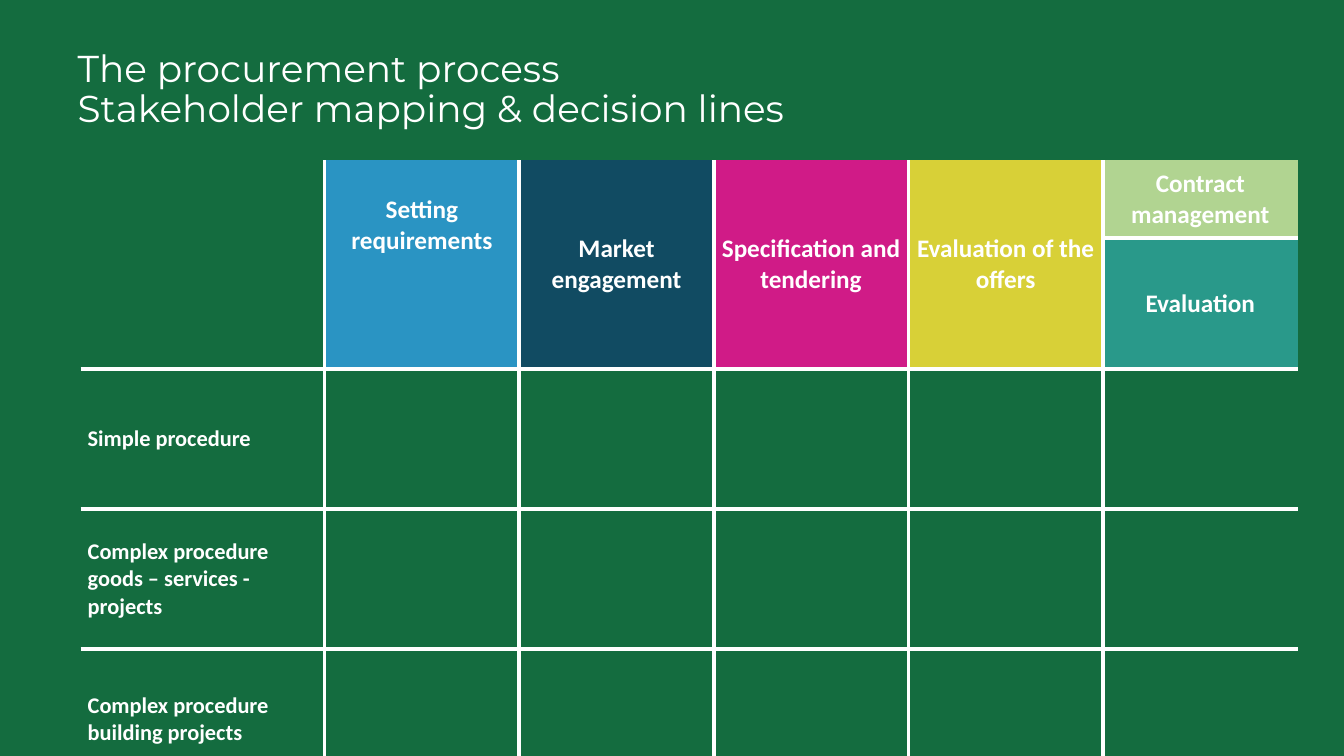
from lxml import etree
from pptx import Presentation
from pptx.dml.color import RGBColor
from pptx.enum import text
from pptx.oxml.ns import qn
from pptx.util import Inches, Pt

WHITE = RGBColor(0xFF, 0xFF, 0xFF)
GREEN = RGBColor(0x14, 0x6C, 0x3F)
BLUE = RGBColor(0x2A, 0x94, 0xC3)
NAVY = RGBColor(0x11, 0x4B, 0x62)
MAGENTA = RGBColor(0xD0, 0x1B, 0x87)
YELLOW = RGBColor(0xD8, 0xD0, 0x37)
LIGHT_GREEN = RGBColor(0xB1, 0xD4, 0x91)
TEAL = RGBColor(0x29, 0x99, 0x8A)

TITLE = ["The procurement process", "Stakeholder mapping & decision lines"]
TALL_PHASES = [
    ("Setting requirements", BLUE),
    ("Market engagement", NAVY),
    ("Specification and tendering", MAGENTA),
    ("Evaluation of the offers", YELLOW),
]
SPLIT_PHASES = [("Contract management", LIGHT_GREEN), ("Evaluation", TEAL)]
PROCEDURES = [
    "Simple procedure",
    "Complex procedure goods – services - projects",
    "Complex procedure building projects",
]
COLUMN_WIDTHS = [2.42] + [1.93] * 5
ROW_HEIGHTS = [0.77, 1.3] + [1.39] * 3


def add_title(slide):
    title = slide.shapes.title
    title.left, title.top = Inches(0.71), Inches(0.35)
    title.width, title.height = Inches(11.58), Inches(1.09)
    frame = title.text_frame
    frame.text = "\n".join(TITLE)
    frame.auto_size = text.MSO_AUTO_SIZE.NONE
    frame.vertical_anchor = text.MSO_ANCHOR.MIDDLE
    frame.margin_left = frame.margin_right = Inches(0.06)
    frame.margin_top = frame.margin_bottom = Inches(0.03)
    for line in frame.paragraphs:
        line.alignment = text.PP_ALIGN.LEFT
        line.line_spacing = 0.9
        line.space_before = Pt(0)
        line.font.name = "Montserrat"
        line.font.size = Pt(26.7)
        line.font.color.rgb = WHITE


def set_borders(cell, sides):
    """Draw white lines on the given sides (of L, R, T, B) and none elsewhere."""
    properties = cell._tc.get_or_add_tcPr()
    for position, side in enumerate("LRTB"):
        line = etree.Element(qn(f"a:ln{side}"), w=str(Pt(3)))
        if side in sides:
            fill = etree.SubElement(line, qn("a:solidFill"))
            etree.SubElement(fill, qn("a:srgbClr"), val=str(WHITE))
        else:
            etree.SubElement(line, qn("a:noFill"))
        properties.insert(position, line)


def write_cell(cell, label, size, alignment):
    cell.text = label
    cell.vertical_anchor = text.MSO_ANCHOR.MIDDLE
    cell.margin_left = cell.margin_right = Inches(0.07)
    cell.margin_top = cell.margin_bottom = Inches(0.04)
    paragraph = cell.text_frame.paragraphs[0]
    paragraph.alignment = alignment
    paragraph.font.name = "Calibri"
    paragraph.font.size = Pt(size)
    paragraph.font.bold = True
    paragraph.font.color.rgb = WHITE


def write_phase(cell, label, color):
    write_cell(cell, label, 18, text.PP_ALIGN.CENTER)
    cell.fill.solid()
    cell.fill.fore_color.rgb = color


def add_grid(slide):
    """Add the green table with white lines between its cells."""
    rows, columns = len(ROW_HEIGHTS), len(COLUMN_WIDTHS)
    grid = slide.shapes.add_table(
        rows, columns, Inches(0.8), Inches(1.59),
        Inches(sum(COLUMN_WIDTHS)), Inches(sum(ROW_HEIGHTS))).table
    for column, width in zip(grid.columns, COLUMN_WIDTHS):
        column.width = Inches(width)
    for row, height in zip(grid.rows, ROW_HEIGHTS):
        row.height = Inches(height)
    for column in range(columns - 1):
        grid.cell(0, column).merge(grid.cell(1, column))

    for r in range(rows):
        for c in range(columns):
            cell = grid.cell(r, c)
            cell.fill.solid()
            cell.fill.fore_color.rgb = GREEN
            inner = {"L": c > 0, "R": c < columns - 1,
                     "T": r > 0 and not cell.is_spanned, "B": r < rows - 1}
            set_borders(cell, [side for side, drawn in inner.items() if drawn])
    return grid


def main():
    deck = Presentation()
    deck.slide_width, deck.slide_height = Inches(13.33), Inches(7.5)
    slide = deck.slides.add_slide(deck.slide_layouts[5])
    slide.background.fill.solid()
    slide.background.fill.fore_color.rgb = GREEN
    add_title(slide)

    grid = add_grid(slide)
    for column, (label, color) in enumerate(TALL_PHASES, start=1):
        write_phase(grid.cell(0, column), label, color)
    requirements = grid.cell(0, 1)
    requirements.vertical_anchor = text.MSO_ANCHOR.TOP
    requirements.margin_top = Inches(0.34)
    for row, (label, color) in enumerate(SPLIT_PHASES):
        write_phase(grid.cell(row, len(COLUMN_WIDTHS) - 1), label, color)
    for row, label in enumerate(PROCEDURES, start=2):
        write_cell(grid.cell(row, 0), label, 16, text.PP_ALIGN.LEFT)
    deck.save("out.pptx")


if __name__ == "__main__":
    main()
